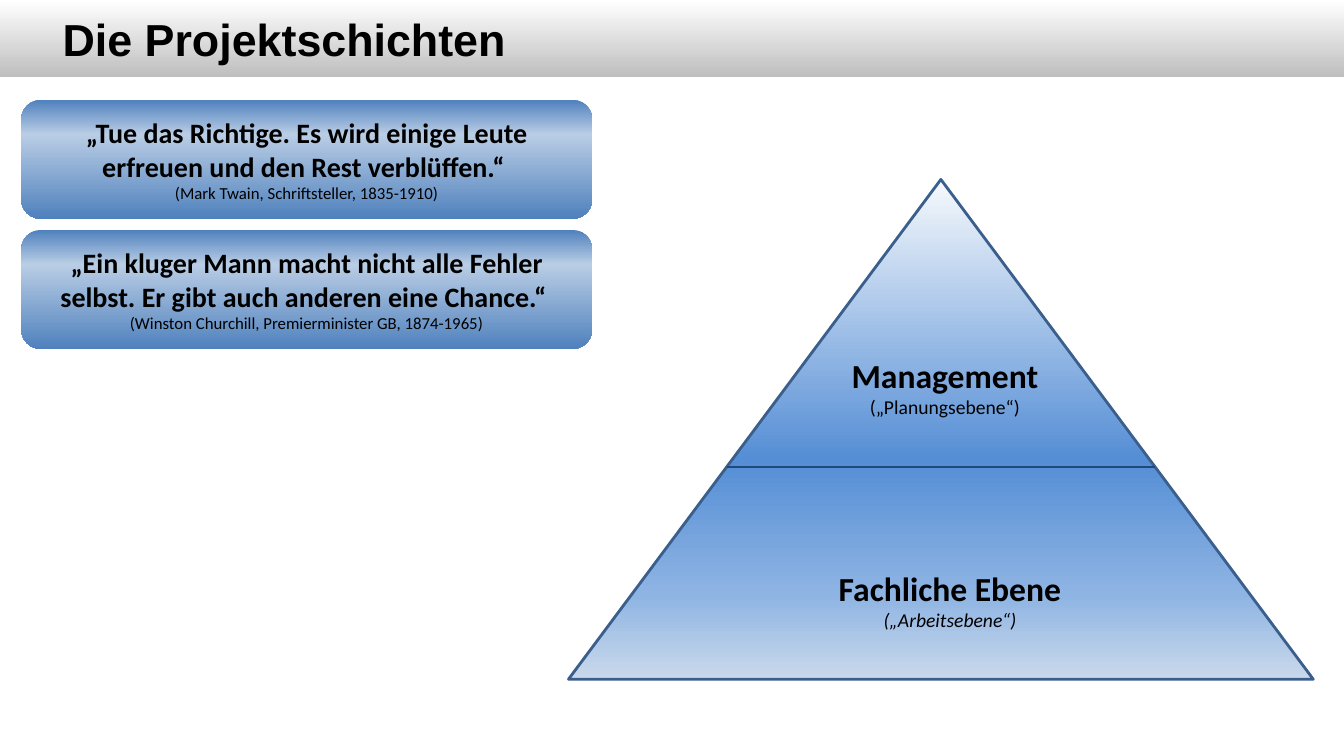
from lxml import etree
from pptx import Presentation
from pptx.dml.color import RGBColor
from pptx.enum.shapes import MSO_CONNECTOR, MSO_SHAPE
from pptx.enum.text import MSO_ANCHOR, MSO_AUTO_SIZE, PP_ALIGN
from pptx.oxml.ns import qn
from pptx.util import Pt

RECT, ROUND = MSO_SHAPE.RECTANGLE, MSO_SHAPE.ROUNDED_RECTANGLE
TRIANGLE = MSO_SHAPE.ISOSCELES_TRIANGLE
STRAIGHT = MSO_CONNECTOR.STRAIGHT
MIDDLE = MSO_ANCHOR.MIDDLE
LEFT, CENTER = PP_ALIGN.LEFT, PP_ALIGN.CENTER
FIXED, GROW = MSO_AUTO_SIZE.NONE, MSO_AUTO_SIZE.SHAPE_TO_FIT_TEXT

COLORS = {
    "text": "000000", "white": "FFFFFF", "gray": "BFBFBF",
    "blue": "4F81BD", "pale": "B9CDE5",
    "tip": "F6F9FC", "deep": "558ED5", "mid": "8EB4E3", "base": "CAD9EB",
    "edge": "3A5F8C", "navy": "1F497D",
}
BAND = [(0, "white"), (100, "gray")]
CARD = [(0, "blue"), (29, "pale"), (100, "blue")]
PYRAMID = [(0, "tip"), (56, "deep"), (83, "mid"), (100, "base")]

QUOTES = [
    ("„Tue das Richtige. Es wird einige Leute erfreuen und den Rest verblüffen.“ ",
     "(Mark Twain, Schriftsteller, 1835-1910)"),
    ("„Ein kluger Mann macht nicht alle Fehler selbst. Er gibt auch anderen eine Chance.“ ",
     "(Winston Churchill, Premierminister GB, 1874-1965)"),
]
# Name, note, italic note, offset from the pyramid's axis and top, width
LEVELS = [
    ("Management", "(„Planungsebene“)", False, 2.9, 121.6, 149),
    ("Fachliche Ebene", "(„Arbeitsebene“)", True, 6.5, 273.6, 175),
]


def color(name):
    return RGBColor.from_string(COLORS[name])


def add_run(para, text, size, bold=False, italic=False, font="Calibri"):
    run = para.add_run()
    run.text = text
    run.font.name = font
    run.font.size = Pt(size)
    run.font.bold = bold
    run.font.italic = italic
    run.font.color.rgb = color("text")


def add_shape(slide, kind, box, stops):
    """Add a shape with a gradient that runs from top to bottom."""
    shape = slide.shapes.add_shape(kind, *map(Pt, box))
    shape.shadow.inherit = False
    shape.line.fill.background()
    shape.fill.gradient()
    shape.fill.gradient_angle = 270
    items = shape._element.spPr.find(".//" + qn("a:gsLst"))
    for item in list(items):
        items.remove(item)
    for pos, name in stops:
        stop = etree.SubElement(items, qn("a:gs"), pos=str(pos * 1000))
        etree.SubElement(stop, qn("a:srgbClr"), val=COLORS[name])
    return shape


def add_header(slide, box, text):
    left, top, width, height = box
    # Band goes behind the title
    band = add_shape(slide, RECT, box, BAND)
    slide.shapes._spTree.insert(2, band._element)
    title = slide.shapes.title
    title.left, title.top = Pt(left + 37.5), Pt(top)
    title.width, title.height = Pt(642), Pt(height)
    frame = title.text_frame
    frame.auto_size = FIXED
    frame.vertical_anchor = MIDDLE
    para = frame.paragraphs[0]
    para.alignment = LEFT
    add_run(para, text, 32, bold=True, font="Arial")


def add_quotes(slide, box, gap):
    left, top, width, height = box
    card = (height - gap * (len(QUOTES) - 1)) / len(QUOTES)
    for i, (quote, source) in enumerate(QUOTES):
        place = (left, top + i * (card + gap), width, card)
        frame = add_shape(slide, ROUND, place, CARD).text_frame
        frame.word_wrap = True
        frame.vertical_anchor = MIDDLE
        para = frame.paragraphs[0]
        para.alignment = CENTER
        add_run(para, quote, 20, bold=True)
        para.add_line_break()
        add_run(para, source, 12)


def add_pyramid(slide, box, split):
    left, top, width, height = box
    axis = left + width / 2
    shape = add_shape(slide, TRIANGLE, box, PYRAMID)
    shape.line.color.rgb = color("edge")
    shape.line.width = Pt(2)

    # Labels of the two levels
    for name, note, italic, shift, drop, wide in LEVELS:
        label = slide.shapes.add_textbox(
            Pt(axis + shift - wide / 2), Pt(top + drop), Pt(wide), Pt(53.3))
        frame = label.text_frame
        frame.word_wrap = False
        frame.auto_size = GROW
        first, second = frame.paragraphs[0], frame.add_paragraph()
        first.alignment = second.alignment = CENTER
        add_run(first, name, 24, bold=True)
        add_run(second, note, 14, italic=italic)

    # Divider from edge to edge
    half = width / 2 * split / height
    y = Pt(top + split)
    line = slide.shapes.add_connector(
        STRAIGHT, Pt(axis - half), y, Pt(axis + half), y)
    line.line.color.rgb = color("navy")
    line.line.width = Pt(1.75)
    etree.SubElement(line._element.spPr, qn("a:effectLst"))


def main():
    deck = Presentation()
    deck.slide_width, deck.slide_height = Pt(960), Pt(540)
    slide = deck.slides.add_slide(deck.slide_layouts[5])
    add_header(slide, (0, 0, 960, 54.7), "Die Projektschichten")
    add_quotes(slide, (15.1, 71.3, 408, 177.9), gap=7.9)
    add_pyramid(slide, (406.1, 128.2, 532, 357), split=205.2)
    deck.save("out.pptx")


if __name__ == "__main__":
    main()
